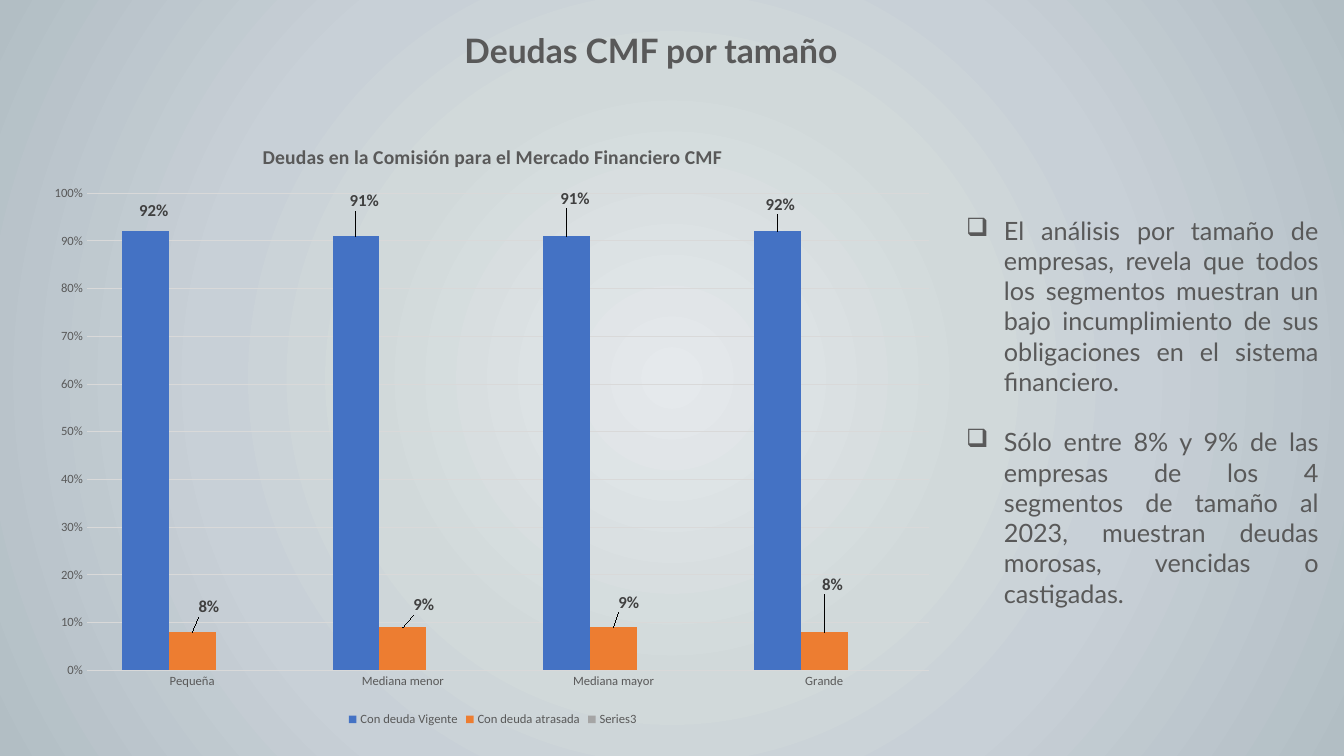
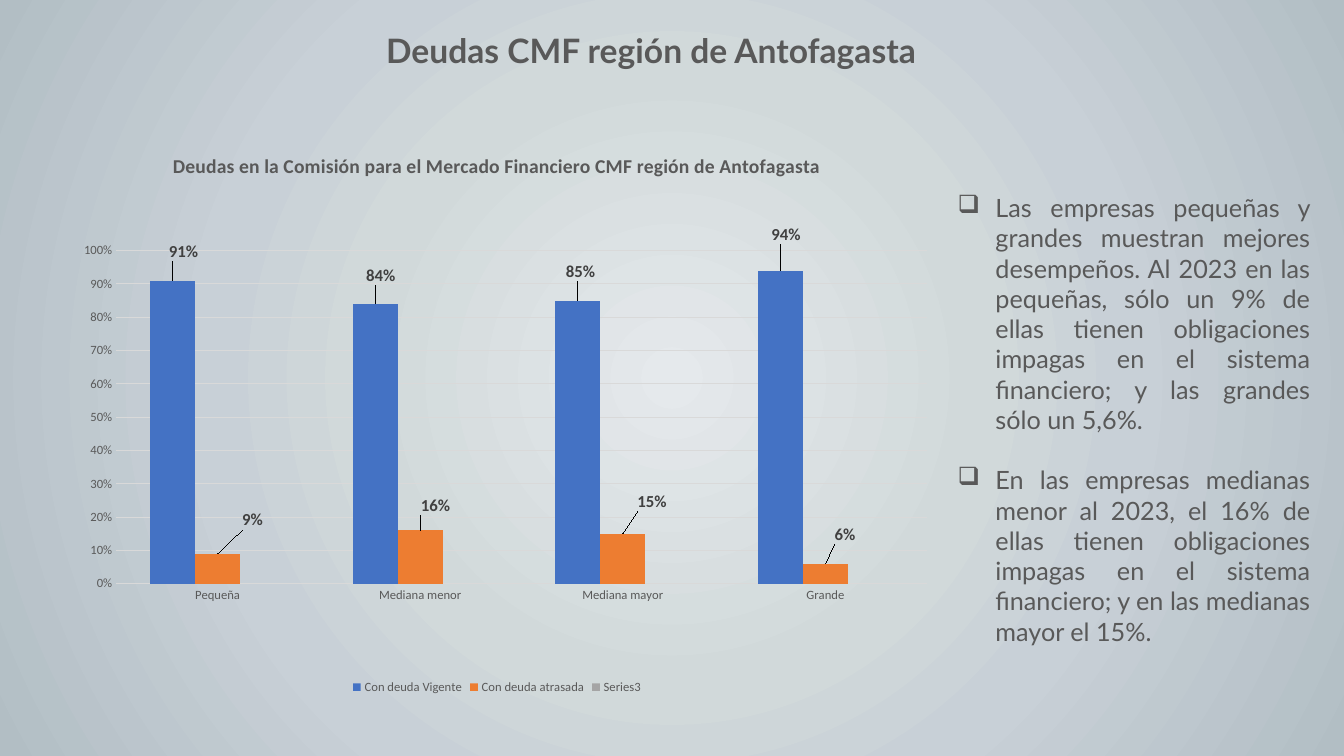
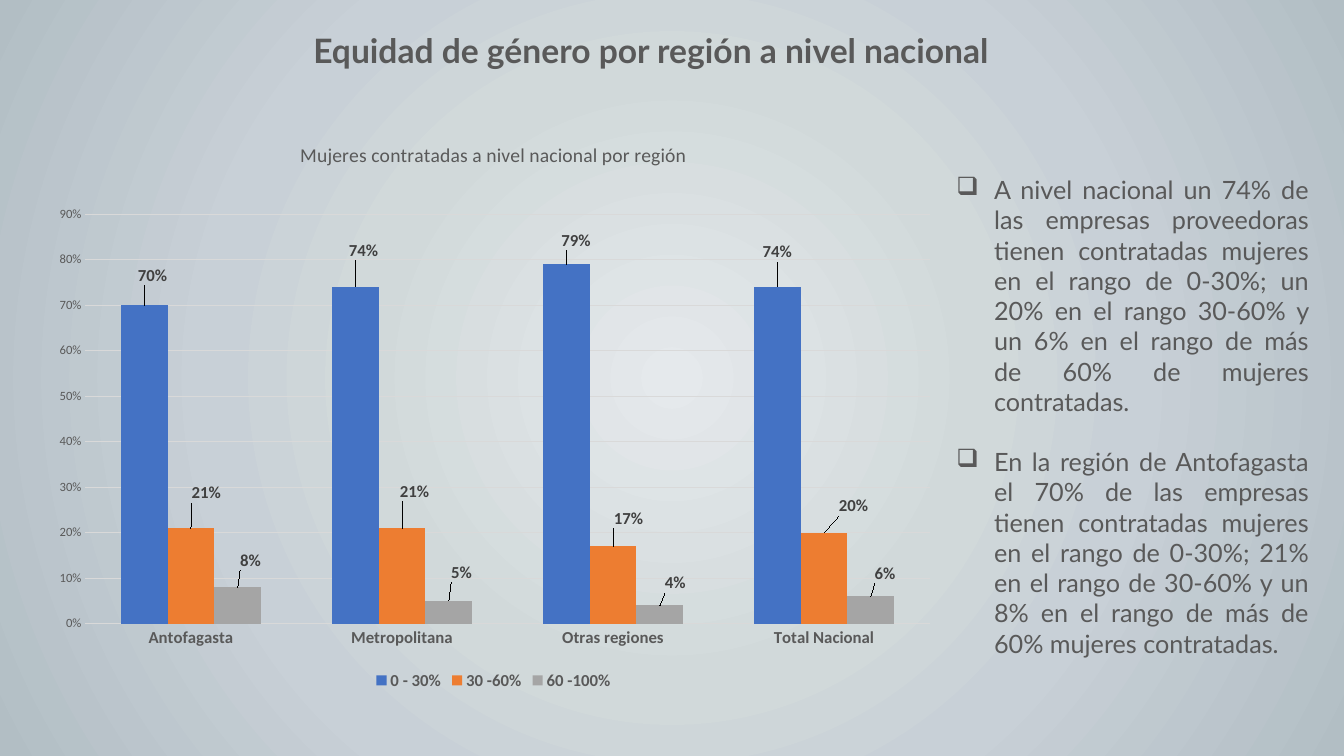
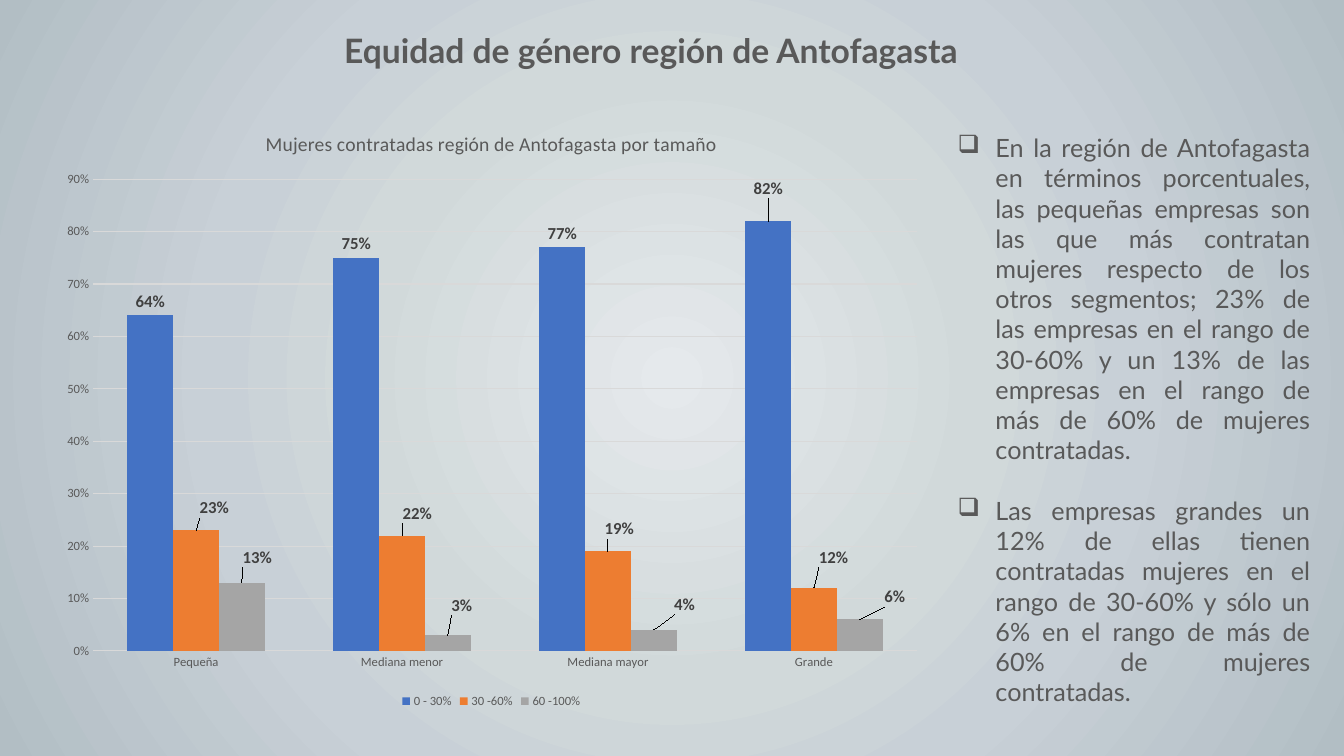
from dataclasses import dataclass

from pptx import Presentation
from pptx.chart.data import CategoryChartData
from pptx.dml.color import RGBColor
from pptx.enum.chart import XL_CHART_TYPE, XL_LABEL_POSITION, XL_LEGEND_POSITION, XL_TICK_MARK
from pptx.enum.text import PP_ALIGN
from pptx.oxml import parse_xml
from pptx.oxml.ns import nsdecls, qn
from pptx.util import Pt

COLORS = {
    "text": "595959",
    "label": "404040",
    "grid": "D9D9D9",
    "glow": "E5E9EC",
    "mist": "D1D9DA",
    "haze": "C8D0D7",
    "edge": "B2BEC4",
}
SERIES_COLORS = ["4472C4", "ED7D31", "A5A5A5"]
BACKGROUND_STOPS = [(0, "glow"), (40, "mist"), (60, "haze"), (100, "edge")]
TEXT_FONT, CHART_FONT = "Lato", "Calibri"
HEADING_BOX = (47, 18, 836, 36)
BULLET_INDENT = 27
BULLET_GAP = 21.6

SIZES = ["Pequeña", "Mediana menor", "Mediana mayor", "Grande"]
REGIONS = ["Antofagasta", "Metropolitana", "Otras regiones", "Total Nacional"]


@dataclass
class Series:
    """Values in percent; label_shifts are (right, down) in points, None for no shift."""
    name: str
    values: list
    label_shifts: list


@dataclass
class DebtOrGenderChart:
    title: str
    box: tuple
    plot_box: tuple
    categories: list
    series: list
    top_percent: int
    bold_title: bool = False
    bold_categories: bool = False


def style_font(font, size, color="text", bold=False, name=CHART_FONT):
    font.name, font.size, font.bold = name, Pt(size), bold
    font.color.rgb = RGBColor.from_string(COLORS[color])


def set_background(master):
    """Radial gradient shared by every slide."""
    master.background.fill.gradient()
    gradient = master.element.find(".//" + qn("a:gradFill"))
    stops = "".join(
        f'<a:gs pos="{percent * 1000}"><a:srgbClr val="{COLORS[key]}"/></a:gs>'
        for percent, key in BACKGROUND_STOPS)
    gradient.getparent().replace(gradient, parse_xml(
        f'<a:gradFill {nsdecls("a")} rotWithShape="1"><a:gsLst>{stops}</a:gsLst>'
        '<a:path path="circle"><a:fillToRect l="50000" t="50000" r="50000" b="50000"/>'
        '</a:path></a:gradFill>'))


def add_text_frame(slide, box):
    frame = slide.shapes.add_textbox(*map(Pt, box)).text_frame
    frame.word_wrap = True
    return frame


def add_heading(slide, text):
    heading = add_text_frame(slide, HEADING_BOX).paragraphs[0]
    heading.text = text
    heading.alignment = PP_ALIGN.CENTER
    style_font(heading.runs[0].font, 24, bold=True, name=TEXT_FONT)


def add_findings(slide, box, findings):
    """Justified text with square bullets."""
    frame = add_text_frame(slide, box)
    for number, finding in enumerate(findings):
        paragraph = frame.add_paragraph() if number else frame.paragraphs[0]
        paragraph.text = finding
        paragraph.alignment = PP_ALIGN.JUSTIFY
        if number:
            paragraph.space_before = Pt(BULLET_GAP)
        properties = paragraph._p.get_or_add_pPr()
        properties.set("marL", str(Pt(BULLET_INDENT)))
        properties.set("indent", str(-Pt(BULLET_INDENT)))
        properties.append(parse_xml(f'<a:buChar {nsdecls("a")} char="❑"/>'))
        style_font(paragraph.runs[0].font, 18, name=TEXT_FONT)


def manual_layout(x, y, extent=""):
    return parse_xml(
        f'<c:layout {nsdecls("c")}><c:manualLayout>{extent}'
        f'<c:x val="{x:.4f}"/><c:y val="{y:.4f}"/></c:manualLayout></c:layout>')


def place_plot(chart, box, plot_box):
    left, top, width, height = box
    x, y, plot_width, plot_height = plot_box
    layout = manual_layout(
        (x - left) / width, (y - top) / height,
        '<c:layoutTarget val="inner"/><c:xMode val="edge"/><c:yMode val="edge"/>')
    for tag, share in (("w", plot_width / width), ("h", plot_height / height)):
        layout[0].append(parse_xml(f'<c:{tag} {nsdecls("c")} val="{share:.4f}"/>'))
    plot_area = chart.element.find(".//" + qn("c:plotArea"))
    for automatic in plot_area.findall(qn("c:layout")):
        plot_area.remove(automatic)
    plot_area.insert(0, layout)


def label_columns(columns, shifts, box):
    labels = columns.data_labels
    labels.show_value = True
    labels.number_format, labels.number_format_is_linked = "0%", False
    labels.position = XL_LABEL_POSITION.OUTSIDE_END
    style_font(labels.font, 12, "label", bold=True)
    for index, shift in enumerate(shifts):
        if shift is None:
            continue
        label = columns.points[index].data_label
        label.position = XL_LABEL_POSITION.OUTSIDE_END
        style_font(label.font, 12, "label", bold=True)
        position = columns._element.find(f".//{qn('c:dLbl')}/{qn('c:idx')}[@val='{index}']")
        position.addnext(manual_layout(shift[0] / box[2], shift[1] / box[3]))


def style_axes(chart, top_percent, bold_categories):
    for axis in (chart.category_axis, chart.value_axis):
        axis.major_tick_mark = axis.minor_tick_mark = XL_TICK_MARK.NONE
        axis.format.line.fill.background()
        style_font(axis.tick_labels.font, 9)
    if bold_categories:
        style_font(chart.category_axis.tick_labels.font, 12, bold=True)
    percent_axis = chart.value_axis
    percent_axis.minimum_scale, percent_axis.maximum_scale = 0, top_percent / 100
    percent_axis.major_unit = 0.1
    percent_axis.tick_labels.number_format = "0%"
    percent_axis.tick_labels.number_format_is_linked = False
    grid = percent_axis.major_gridlines.format.line
    grid.width = Pt(0.75)
    grid.color.rgb = RGBColor.from_string(COLORS["grid"])


def add_column_chart(slide, content):
    data = CategoryChartData(number_format="0%")
    data.categories = content.categories
    for series in content.series:
        data.add_series(series.name, [None if v is None else v / 100 for v in series.values])
    chart = slide.shapes.add_chart(
        XL_CHART_TYPE.COLUMN_CLUSTERED, *map(Pt, content.box), data).chart
    style_font(chart.font, 10)

    chart.has_title = True
    title = chart.chart_title.text_frame
    title.text = content.title
    style_font(title.paragraphs[0].runs[0].font, 14, bold=content.bold_title)
    chart.chart_title.include_in_layout = False

    chart.has_legend = True
    chart.legend.position = XL_LEGEND_POSITION.BOTTOM
    chart.legend.include_in_layout = False
    style_font(chart.legend.font, 12 if content.bold_categories else 9,
               bold=content.bold_categories)

    style_axes(chart, content.top_percent, content.bold_categories)
    place_plot(chart, content.box, content.plot_box)
    plot = chart.plots[0]
    plot.gap_width, plot.overlap, plot.vary_by_categories = 150, 0, False
    for columns, series, color in zip(plot.series, content.series, SERIES_COLORS):
        columns.format.fill.solid()
        columns.format.fill.fore_color.rgb = RGBColor.from_string(color)
        label_columns(columns, series.label_shifts, content.box)


def debt_series(current, current_shifts, overdue, overdue_shifts):
    return [Series("Con deuda Vigente", current, current_shifts),
            Series("Con deuda atrasada", overdue, overdue_shifts),
            Series("Series3", [None] * 4, [])]


def gender_series(*values_and_shifts):
    names = ["0 - 30%", "30 -60%", "60 -100%"]
    return [Series(name, *pair) for name, pair in zip(names, values_and_shifts)]


SLIDES = [
    ("Deudas CMF por tamaño",
     DebtOrGenderChart(
         "Deudas en la Comisión para el Mercado Financiero CMF",
         (26, 87, 652, 435), (62, 138, 602, 341), SIZES,
         debt_series([92, 91, 91, 92], [(6, -5), (6, -15), (6, -17), (2, -9)],
                     [8, 9, 9, 8], [(12, -8), (15, -6), (11, -8), (6, -24)]),
         100, bold_title=True),
     (683, 150, 266, 291),
     ["El análisis por tamaño de empresas, revela que todos los segmentos muestran un bajo "
      "incumplimiento de sus obligaciones en el sistema financiero.",
      "Sólo entre 8% y 9% de las empresas de los 4 segmentos de tamaño al 2023, muestran "
      "deudas morosas, vencidas o castigadas."]),
    ("Deudas CMF región de Antofagasta",
     DebtOrGenderChart(
         "Deudas en la Comisión para el Mercado Financiero CMF región de Antofagasta",
         (32, 94, 646, 405), (83, 179, 579, 238), SIZES,
         debt_series([91, 84, 85, 94], [(8, -11), (4, -10), (2, -11), (4, -16)],
                     [9, 16, 15, 6], [(25, -14), (11, -8), (21, -13), (14, -11)]),
         100, bold_title=True),
     (677, 134, 266, 312),
     ["Las empresas pequeñas y grandes muestran mejores desempeños. Al 2023 en las pequeñas, "
      "sólo un 9% de ellas tienen obligaciones impagas en el sistema financiero; y las "
      "grandes sólo un 5,6%.",
      "En las empresas medianas menor al 2023, el 16% de ellas tienen obligaciones impagas "
      "en el sistema financiero; y en las medianas mayor el 15%."]),
    ("Equidad de género por región a nivel nacional",
     DebtOrGenderChart(
         "Mujeres contratadas a nivel nacional por región",
         (29, 86, 647, 410), (61, 153, 603, 292.5), REGIONS,
         gender_series(([70, 74, 79, 74], [(6, -11), (6, -16), (7, -7), (0, -15)]),
                       ([21, 21, 17, 20], [(11, -15), (9, -16), (11, -10), (21, -9)]),
                       ([8, 5, 4, 6], [(9, -9), (9, -10), (11, -6), (10, -6)])),
         90, bold_categories=True),
     (676, 121, 266, 356),
     ["A nivel nacional un 74% de las empresas proveedoras tienen contratadas mujeres en el "
      "rango de 0-30%; un 20% en el rango 30-60% y un 6% en el rango de más de 60% de "
      "mujeres contratadas.",
      "En la región de Antofagasta el 70% de las empresas tienen contratadas mujeres en el "
      "rango de 0-30%; 21% en el rango de 30-60% y un 8% en el rango de más de 60% mujeres "
      "contratadas."]),
    ("Equidad de género región de Antofagasta",
     DebtOrGenderChart(
         "Mujeres contratadas región de Antofagasta por tamaño",
         (35, 78, 632, 431), (66.5, 128, 588.5, 337), SIZES,
         gender_series(([64, 75, 77, 82], [None, None, None, (0, -13)]),
                       ([23, 22, 19, 12], [(13, -6), (11, -6), (8, -6), (14, -12)]),
                       ([13, 3, 4, 6], [(11, -8), (10, -11), (22, -8), (25, -6)])),
         90),
     (677, 91, 266, 400),
     ["En la región de Antofagasta en términos porcentuales, las pequeñas empresas son las "
      "que más contratan mujeres respecto de los otros segmentos; 23% de las empresas en el "
      "rango de 30-60% y un 13% de las empresas en el rango de más de 60% de mujeres "
      "contratadas.",
      "Las empresas grandes un 12% de ellas tienen contratadas mujeres en el rango de 30-60% "
      "y sólo un 6% en el rango de más de 60% de mujeres contratadas."]),
]


def main():
    deck = Presentation()
    deck.slide_width, deck.slide_height = Pt(960), Pt(540)
    set_background(deck.slide_master)
    for heading, chart, findings_box, findings in SLIDES:
        slide = deck.slides.add_slide(deck.slide_layouts[6])
        add_heading(slide, heading)
        add_findings(slide, findings_box, findings)
        add_column_chart(slide, chart)
    deck.save("out.pptx")


if __name__ == "__main__":
    main()
